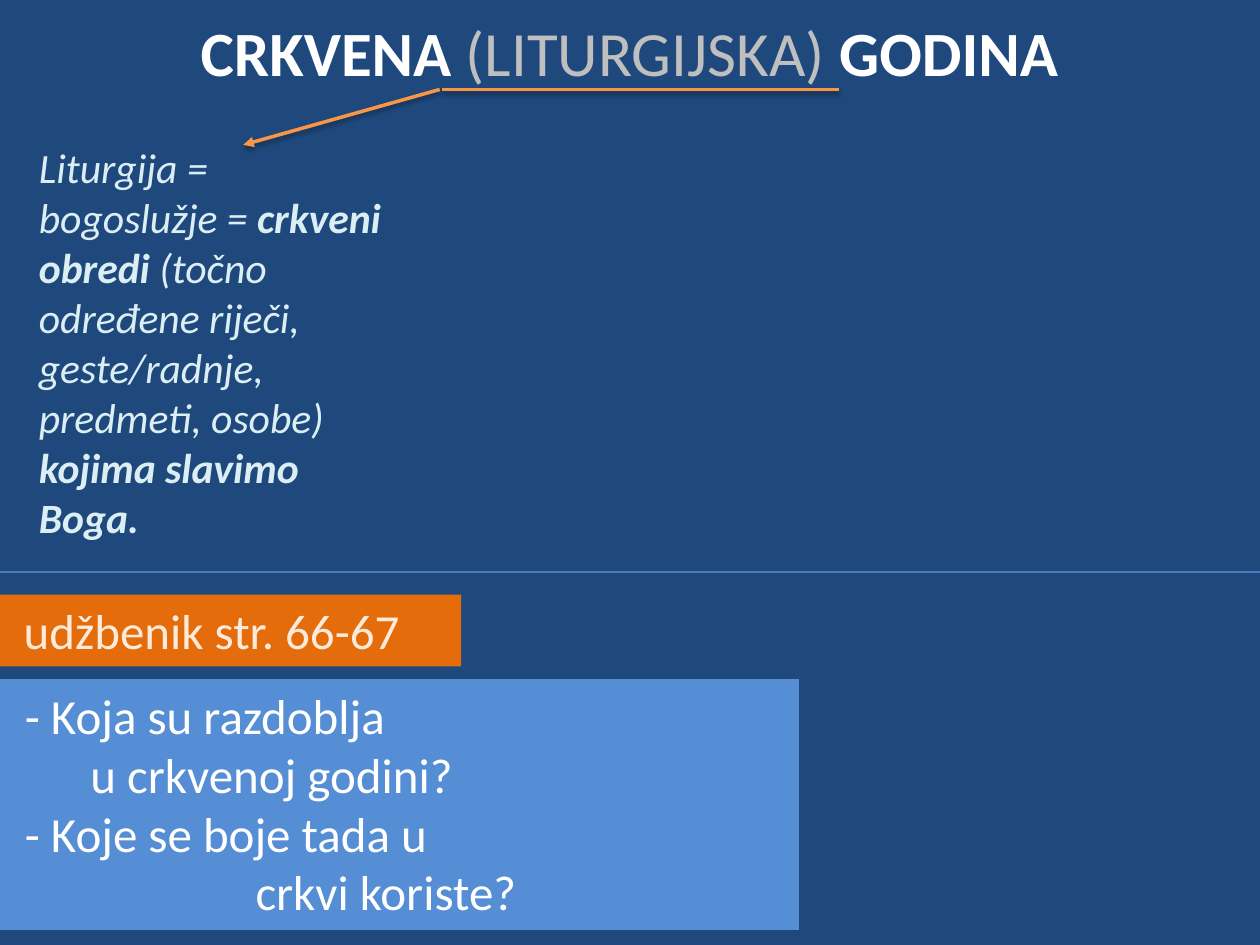
from typing import NamedTuple

from lxml.etree import SubElement
from pptx import Presentation
from pptx.dml.color import RGBColor
from pptx.enum.shapes import MSO_CONNECTOR, MSO_SHAPE
from pptx.enum.text import MSO_ANCHOR, PP_ALIGN
from pptx.oxml.ns import qn
from pptx.util import Inches, Pt

FONT = "Calibri"
COLORS = {
    "background": "1F497D",
    "white": "FFFFFF",
    "muted": "BFBFBF",
    "definition": "DBEEF4",
    "orange": "E46C0A",
    "cream": "FDEADA",
    "blue": "558ED5",
    "divider": "4B7EBC",
    "accent": "F79646",
    "shadow": "000000",
}


class Box(NamedTuple):
    left: float
    top: float
    width: float
    height: float


class Span(NamedTuple):
    text: str
    bold: bool = False
    color: str | None = None


class Line(NamedTuple):
    spans: list[Span]
    indent: float = 0


class Rule(NamedTuple):
    start: tuple[float, float]
    end: tuple[float, float]
    color: str
    width: float
    shadow: bool = False
    arrow: bool = False


def rgb(name: str) -> RGBColor:
    return RGBColor.from_string(COLORS[name])


def add_text(slide, box: Box, lines: list[Line], size: float, color: str, fill: str | None = None,
             align=PP_ALIGN.LEFT, anchor=MSO_ANCHOR.TOP, italic: bool = False) -> None:
    """Draw a text box, or a filled rectangle when a fill is given."""
    place = [Inches(v) for v in box]
    if fill:
        sp = slide.shapes.add_shape(MSO_SHAPE.RECTANGLE, *place)
        sp.shadow.inherit = False
        sp.fill.solid()
        sp.fill.fore_color.rgb = rgb(fill)
        sp.line.fill.background()
    else:
        sp = slide.shapes.add_textbox(*place)
    tf = sp.text_frame
    tf.word_wrap = True
    tf.vertical_anchor = anchor
    for i, line in enumerate(lines):
        p = tf.add_paragraph() if i else tf.paragraphs[0]
        p.alignment = align
        p.font.name, p.font.size, p.font.italic = FONT, Pt(size), italic
        p.font.color.rgb = rgb(color)
        if line.indent:
            p._p.get_or_add_pPr().set("marL", str(Inches(line.indent)))
        for span in line.spans:
            r = p.add_run()
            r.text = span.text
            r.font.bold = span.bold
            if span.color:
                r.font.color.rgb = rgb(span.color)


def add_rule(slide, rule: Rule) -> None:
    """Draw a straight line with an optional arrowhead and soft shadow."""
    points = [Inches(v) for v in (*rule.start, *rule.end)]
    cx = slide.shapes.add_connector(MSO_CONNECTOR.STRAIGHT, *points)
    cx.line.color.rgb = rgb(rule.color)
    cx.line.width = Pt(rule.width)
    if rule.arrow:
        SubElement(cx.line._get_or_add_ln(), qn("a:tailEnd"), type="triangle")
    effects = SubElement(cx._element.spPr, qn("a:effectLst"))
    if rule.shadow:
        shadow = SubElement(effects, qn("a:outerShdw"), blurRad=str(Pt(3.1)), dist=str(Pt(1.6)),
                            dir="5400000", rotWithShape="0")
        tint = SubElement(shadow, qn("a:srgbClr"), val=COLORS["shadow"])
        SubElement(tint, qn("a:alpha"), val="38000")


TITLE = [Line([Span("CRKVENA ", True), Span("(LITURGIJSKA)", color="muted"), Span(" GODINA", True)])]
DEFINITION = [Line([
    Span("Liturgija = bogoslužje = "),
    Span("crkveni obredi ", True),
    Span("(točno određene riječi, geste/radnje, predmeti, osobe) "),
    Span("kojima slavimo Boga.", True),
])]
TEXTBOOK = [Line([Span("udžbenik str. 66-67")], 0.1)]
QUESTIONS = [
    Line([Span("- Koja su razdoblja")], 0.1),
    Line([Span("u crkvenoj godini?")], 0.62),
    Line([Span("- Koje se boje tada u")], 0.1),
    Line([Span("crkvi koriste?")], 1.93),
]
RULES = [
    Rule((-0.06, 4.54), (10.06, 4.54), "divider", 0.75),
    Rule((3.51, 0.71), (6.66, 0.71), "accent", 2, shadow=True),
    Rule((3.49, 0.71), (1.93, 1.15), "accent", 2, shadow=True, arrow=True),
]


def main() -> None:
    prs = Presentation()
    prs.slide_width, prs.slide_height = Inches(10), Inches(7.5)
    s = prs.slides.add_slide(prs.slide_layouts[6])
    s.background.fill.solid()
    s.background.fill.fore_color.rgb = rgb("background")

    # Title and definition
    add_text(s, Box(0.07, 0.06, 9.85, 0.7), TITLE, 36, "white",
             align=PP_ALIGN.CENTER, anchor=MSO_ANCHOR.MIDDLE)
    add_text(s, Box(0.21, 1.08, 2.99, 3.06), DEFINITION, 23.8, "definition", italic=True)

    # Textbook pages and questions
    add_text(s, Box(-0.01, 4.72, 3.67, 0.57), TEXTBOOK, 28, "cream", fill="orange")
    add_text(s, Box(0, 5.39, 6.34, 1.99), QUESTIONS, 28, "white", fill="blue")

    # Divider, underline and arrow
    for rule in RULES:
        add_rule(s, rule)

    prs.save("out.pptx")


if __name__ == "__main__":
    main()
